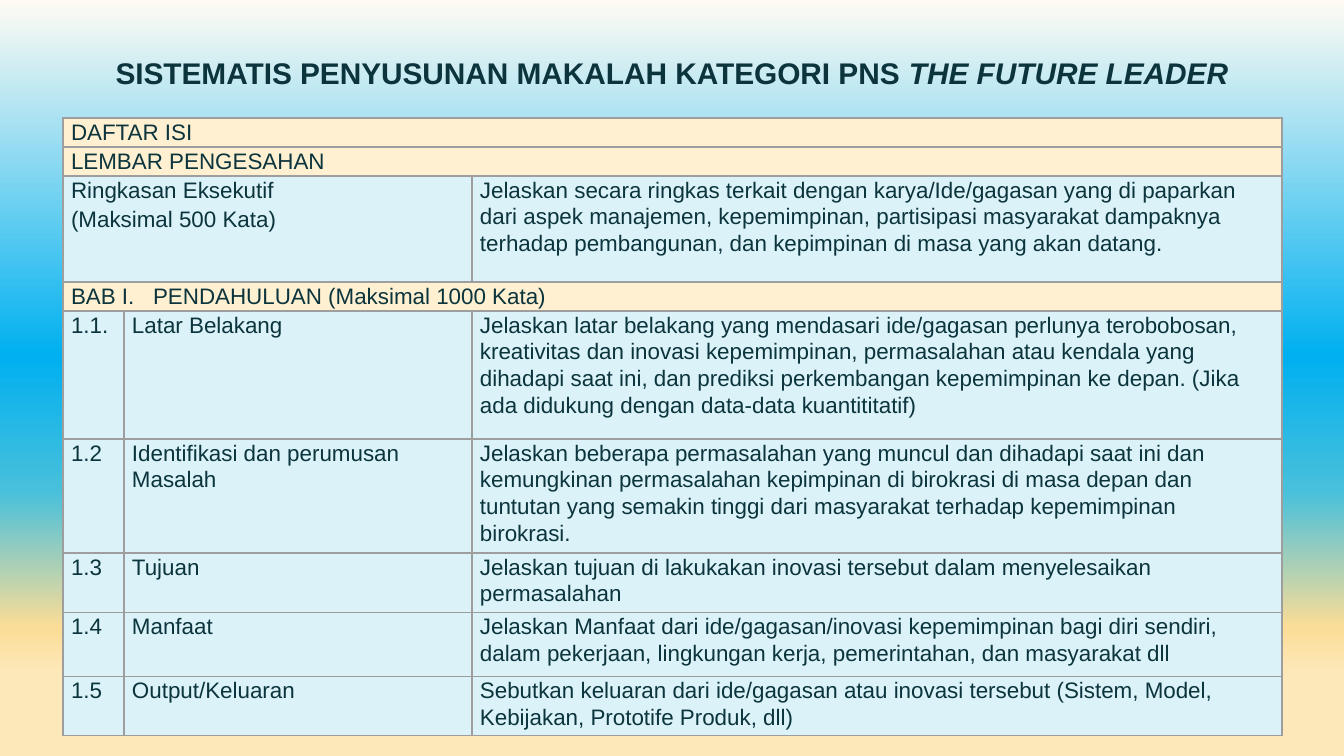
from lxml.etree import SubElement
from pptx import Presentation
from pptx.dml.color import RGBColor
from pptx.enum.text import MSO_ANCHOR, MSO_AUTO_SIZE, PP_ALIGN
from pptx.oxml.ns import qn
from pptx.util import Pt

SCALE = 914400 / 134.4  # EMU per px
INK, CREAM, ICE, GREY = "0C343D", "FEF0D1", "DAF2F8", "9E9E9E"


def px(length):
    return round(length * SCALE)


def format_paragraph(paragraph, size):
    paragraph.line_spacing = 1.07
    paragraph.space_after = Pt(1.4)
    for run in paragraph.runs:
        run.font.color.rgb = RGBColor.from_string(INK)
        for name, value in {"name": "Arial", "size": Pt(size)}.items():
            setattr(run.font, name, value)


presentation = Presentation()
presentation.slide_width, presentation.slide_height = px(1344), px(756)
slide = presentation.slides.add_slide(presentation.slide_layouts[5])

# Background gradient, from top to bottom
background = slide.background.fill
background.gradient()
background.gradient_angle = 270
stops = slide.element.find(".//" + qn("a:gsLst"))
for stop in list(stops):
    stops.remove(stop)
for position, color in [(0, "FFFBF3"), (47, "00B0F0"), (65, "48C0DB"),
                        (83, "FCDD97"), (89, "FDE8B9")]:
    stop = SubElement(stops, qn("a:gs"), pos=str(position * 1000))
    SubElement(stop, qn("a:srgbClr"), val=color)

# Title
title = slide.shapes.title
for name, value in {"left": px(88), "top": px(45), "width": px(1168), "height": px(50)}.items():
    setattr(title, name, value)
for name, value in {"word_wrap": True, "auto_size": MSO_AUTO_SIZE.NONE,
                    "vertical_anchor": MSO_ANCHOR.TOP}.items():
    setattr(title.text_frame, name, value)
paragraph = title.text_frame.paragraphs[0]
paragraph.alignment = PP_ALIGN.CENTER
for text, italic in [("SISTEMATIS PENYUSUNAN MAKALAH KATEGORI PNS ", False),
                     ("THE FUTURE LEADER", True)]:
    run = paragraph.add_run()
    run.text = text
    run.font.bold, run.font.italic = True, italic
format_paragraph(paragraph, 16)

# Rows: height and texts; fewer than three texts means merged cells
rows = [
    (29, ["DAFTAR ISI"]),
    (29, ["LEMBAR PENGESAHAN"]),
    (106, ["Ringkasan Eksekutif\n(Maksimal 500 Kata)",
           "Jelaskan secara ringkas terkait dengan karya/Ide/gagasan yang di paparkan dari aspek "
           "manajemen, kepemimpinan, partisipasi masyarakat dampaknya terhadap pembangunan, dan "
           "kepimpinan di masa yang akan datang."]),
    (29, ["BAB I.\tPENDAHULUAN (Maksimal 1000 Kata)"]),
    (128, ["1.1.", "Latar Belakang",
           "Jelaskan latar belakang yang mendasari ide/gagasan perlunya terobobosan, kreativitas "
           "dan inovasi kepemimpinan, permasalahan atau kendala yang dihadapi saat ini, dan "
           "prediksi perkembangan kepemimpinan ke depan. (Jika ada didukung dengan data-data "
           "kuantititatif)"]),
    (114, ["1.2", "Identifikasi dan perumusan Masalah",
           "Jelaskan beberapa permasalahan yang muncul dan dihadapi saat ini dan kemungkinan "
           "permasalahan kepimpinan di birokrasi di masa depan dan tuntutan yang semakin tinggi "
           "dari masyarakat terhadap kepemimpinan birokrasi."]),
    (60, ["1.3", "Tujuan",
          "Jelaskan tujuan di lakukakan inovasi tersebut dalam menyelesaikan permasalahan"]),
    (64, ["1.4", "Manfaat",
          "Jelaskan Manfaat dari ide/gagasan/inovasi kepemimpinan bagi diri sendiri, dalam "
          "pekerjaan, lingkungan kerja, pemerintahan, dan masyarakat dll"]),
    (59, ["1.5", "Output/Keluaran",
          "Sebutkan keluaran dari ide/gagasan atau inovasi tersebut (Sistem, Model, Kebijakan, "
          "Prototife Produk, dll)"]),
]
column_widths = [61, 348, 810]
table = slide.shapes.add_table(len(rows), 3, px(63), px(118), px(sum(column_widths)),
                               px(sum(height for height, texts in rows))).table
table.first_row = table.horz_banding = False
for column, width in zip(table.columns, column_widths):
    column.width = px(width)

for row_index, (height, texts) in enumerate(rows):
    table.rows[row_index].height = px(height)
    cells = [table.cell(row_index, column_index) for column_index in range(3)]

    # Borders, fill and margins
    for cell in cells:
        properties = cell._tc.get_or_add_tcPr()
        for side in ("a:lnL", "a:lnR", "a:lnT", "a:lnB"):
            line = SubElement(properties, qn(side), w=str(Pt(0.75)))
            SubElement(SubElement(line, qn("a:solidFill")), qn("a:srgbClr"), val=GREY)
        cell.fill.solid()
        cell.fill.fore_color.rgb = RGBColor.from_string(CREAM if len(texts) == 1 else ICE)
        for name, value in {"margin_left": px(8), "margin_right": px(8),
                            "margin_top": 0, "margin_bottom": 0}.items():
            setattr(cell, name, value)

    # Merged cells and text
    if len(texts) < 3:
        cells[0].merge(cells[3 - len(texts)])
        cells = [cells[0], cells[2]]
    for cell, text in zip(cells, texts):
        cell.text_frame.text = text
        for paragraph in cell.text_frame.paragraphs:
            format_paragraph(paragraph, 12)
            if "\t" in text:
                tabs = SubElement(paragraph._p.get_or_add_pPr(), qn("a:tabLst"))
                SubElement(tabs, qn("a:tab"), pos=str(px(82)), algn="l")

presentation.save("out.pptx")
